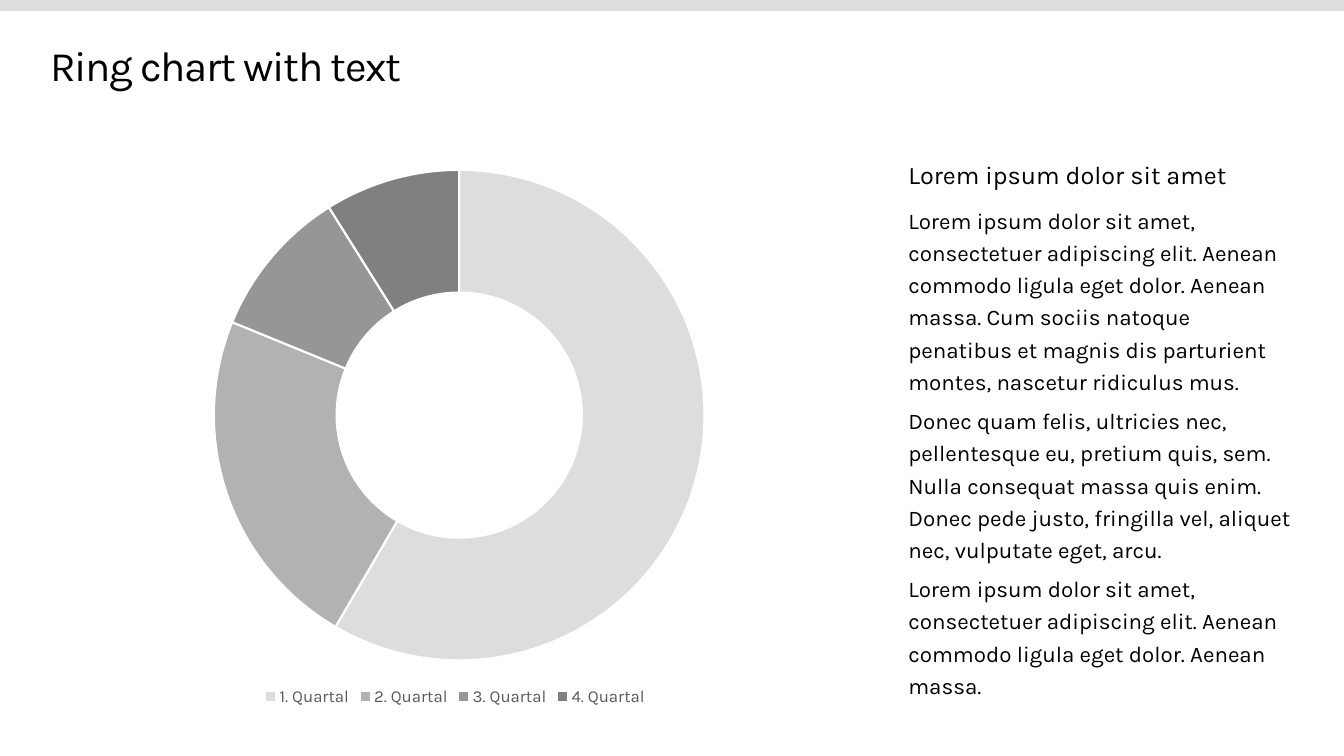
import pptx
import pptx.chart.data
import pptx.dml.color
import pptx.enum.chart
import pptx.enum.shapes
import pptx.enum.text
import pptx.oxml
import pptx.oxml.ns
import pptx.util
from dataclasses import dataclass

Inches = pptx.util.Inches
Pt = pptx.util.Pt


@dataclass(frozen=True)
class Theme:
    font: str = "Karla"
    ink: str = "000000"
    muted: str = "595959"
    paper: str = "FFFFFF"
    band: str = "DDDDDD"
    rings: tuple = ("DDDDDD", "B2B2B2", "969696", "808080")
    title: int = 30
    head: int = 18
    body: int = 16
    legend: int = 12
    label: int = 10


THEME = Theme()
BODY = (
    "Lorem ipsum dolor sit amet, consectetuer adipiscing elit. Aenean commodo ligula eget dolor. "
    "Aenean massa. Cum sociis natoque penatibus et magnis dis parturient montes, nascetur ridiculus mus.",
    "Donec quam felis, ultricies nec, pellentesque eu, pretium quis, sem. Nulla consequat massa quis enim. "
    "Donec pede justo, fringilla vel, aliquet nec, vulputate eget, arcu.",
    "Lorem ipsum dolor sit amet, consectetuer adipiscing elit. Aenean commodo ligula eget dolor. Aenean massa.",
)
SHARES = {"1. Quartal": 59, "2. Quartal": 23, "3. Quartal": 10, "4. Quartal": 9}


def color(value):
    return pptx.dml.color.RGBColor.from_string(value)


def style(font, size, ink):
    font.name = THEME.font
    font.size = Pt(size)
    font.color.rgb = color(ink)


def add_text(slide, lines, box, size, leading=1.2, gap=5, kerning=0, anchor="TOP"):
    frame = slide.shapes.add_textbox(*map(Inches, box)).text_frame
    frame.word_wrap = True
    frame.margin_left = frame.margin_right = frame.margin_top = frame.margin_bottom = 0
    frame.vertical_anchor = pptx.enum.text.MSO_ANCHOR[anchor]
    for index, line in enumerate(lines):
        para = frame.add_paragraph() if index else frame.paragraphs[0]
        para.line_spacing = leading
        para.space_before = Pt(gap if index else 0)
        run = para.add_run()
        run.text = line
        style(run.font, size, THEME.ink)
        if kerning:
            run.font._element.set("spc", str(kerning))


def add_band(slide):
    band = slide.shapes.add_shape(
        pptx.enum.shapes.MSO_SHAPE.RECTANGLE, 0, 0, Inches(13.33), Inches(0.11))
    band.shadow.inherit = False
    band.fill.solid()
    band.fill.fore_color.rgb = color(THEME.band)
    band.line.fill.background()


def place_plot(chart, **ratios):
    area = chart._chartSpace.chart.plotArea
    for old in area.findall(pptx.oxml.ns.qn("c:layout")):
        area.remove(old)
    modes = '<c:layoutTarget val="inner"/><c:xMode val="edge"/><c:yMode val="edge"/>'
    sizes = "".join(f'<c:{key} val="{value}"/>' for key, value in ratios.items())
    area.insert(0, pptx.oxml.parse_xml(
        f'<c:layout {pptx.oxml.ns.nsdecls("c")}><c:manualLayout>{modes}{sizes}'
        '</c:manualLayout></c:layout>'))


def add_ring(slide, box):
    data = pptx.chart.data.CategoryChartData()
    data.categories = list(SHARES)
    data.add_series("Series 1", list(SHARES.values()))
    chart = slide.shapes.add_chart(
        pptx.enum.chart.XL_CHART_TYPE.DOUGHNUT, *map(Inches, box), data).chart
    chart.has_title = False
    style(chart.font, THEME.label, THEME.ink)
    chart.has_legend = True
    chart.legend.position = pptx.enum.chart.XL_LEGEND_POSITION.BOTTOM
    chart.legend.include_in_layout = False
    style(chart.legend.font, THEME.legend, THEME.muted)
    plot = chart.plots[0]
    plot.vary_by_categories = True
    for hole in plot._element.findall(pptx.oxml.ns.qn("c:holeSize")):
        hole.set("val", "75")
    for index, shade in enumerate(THEME.rings):
        part = plot.series[0].points[index].format
        part.fill.solid()
        part.fill.fore_color.rgb = color(shade)
        part.line.color.rgb = color(THEME.paper)
        part.line.width = Pt(1.5)
    place_plot(chart, x=0.2, y=0.03, w=0.61, h=0.88)


def main():
    deck = pptx.Presentation()
    deck.slide_width, deck.slide_height = Inches(13.33), Inches(7.5)
    slide = deck.slides.add_slide(deck.slide_layouts[6])
    add_band(slide)
    add_text(slide, ["Ring chart with text"], (0.5, 0.35, 12.33, 0.64), THEME.title,
             leading=0.9, kerning=-100, anchor="MIDDLE")
    add_ring(slide, (0.5, 1.52, 8.03, 5.53))
    add_text(slide, BODY, (9.01, 2, 3.83, 5.04), THEME.body)
    add_text(slide, ["Lorem ipsum dolor sit amet"], (9.01, 1.52, 3.83, 0.37), THEME.head)
    deck.save("out.pptx")


if __name__ == "__main__":
    main()
